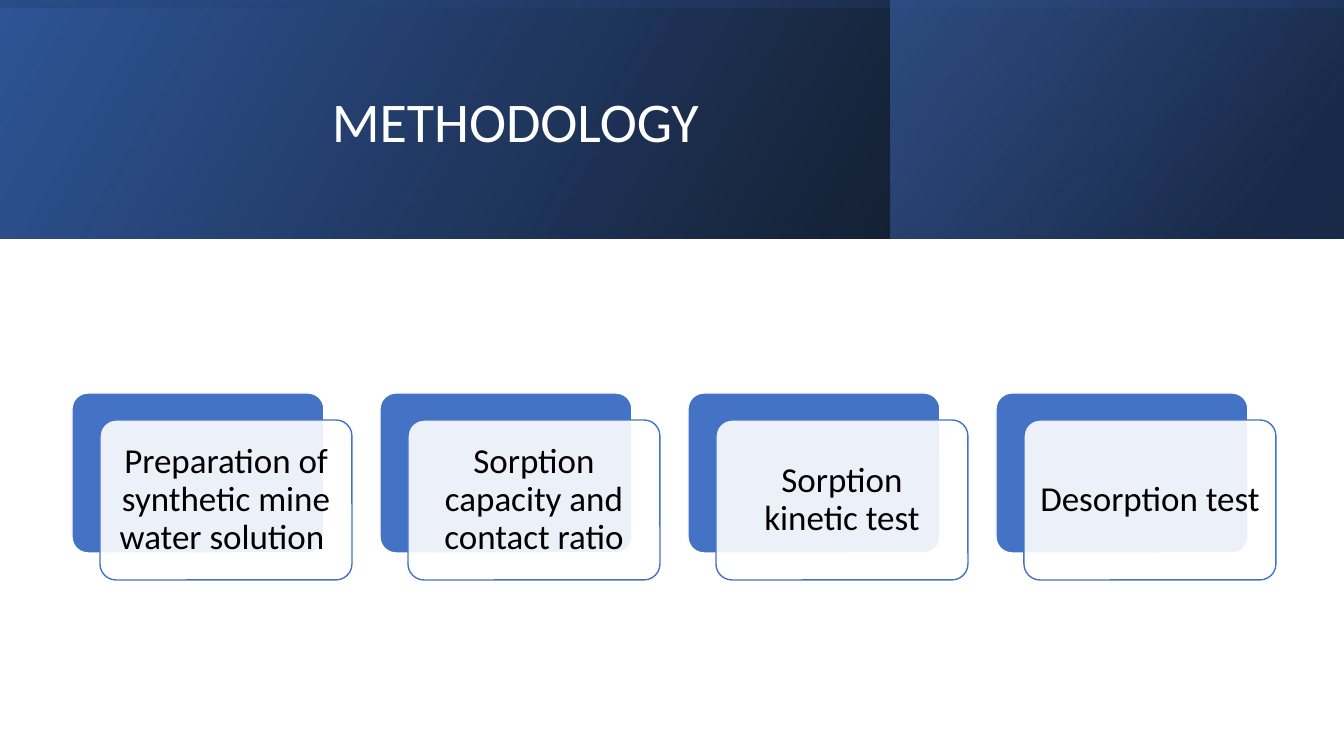
from dataclasses import dataclass

from lxml import etree
from pptx import Presentation
from pptx import util as u
from pptx.dml.color import RGBColor
from pptx.enum import shapes, text
from pptx.oxml.ns import qn
from pptx.shapes.autoshape import Shape
from pptx.slide import Slide
from pptx.text.text import TextFrame

EMU_PER_PX = 914400 / 100.8
FONT = "Calibri"

WHITE = RGBColor(0xFF, 0xFF, 0xFF)
BLACK = RGBColor(0x00, 0x00, 0x00)
BLUE = RGBColor(0x44, 0x72, 0xC4)
DEEP_BLUE = RGBColor(0x2F, 0x55, 0x97)
NAVY = RGBColor(0x20, 0x38, 0x64)


@dataclass(frozen=True)
class Box:
    left: int
    top: int
    width: int
    height: int


@dataclass(frozen=True)
class Stop:
    position: float
    color: RGBColor
    opacity: int


@dataclass(frozen=True)
class Band:
    box: Box
    start: Stop
    end: Stop
    angle: int  # counter-clockwise degrees
    rotation: int = 0


BANDS = [
    Band(Box(0, 0, 1344, 239), Stop(0, BLACK, 96), Stop(1, DEEP_BLUE, 100), 30),
    Band(Box(891, 0, 452, 239), Stop(0.19, NAVY, 68), Stop(1, BLUE, 48), 40),
    Band(Box(552, -552, 239, 1344), Stop(0.23, DEEP_BLUE, 16), Stop(0.99, BLACK, 45), 10, 270),
]

TITLE_BOX = Box(152, 38, 739, 173)
STEPS = [
    "Preparation of synthetic mine water solution ",
    "Sorption capacity and contact ratio",
    "Sorption kinetic test",
    "Desorption test",
]
FIRST_CARD = Box(72, 393, 252, 160)
CARD_PITCH = 308
FRONT_SHIFT_X, FRONT_SHIFT_Y = 28, 27
CARD_INSET = 10


def px(length: int) -> u.Emu:
    return u.Emu(round(length * EMU_PER_PX))


def add_box(page: Slide, kind: shapes.MSO_SHAPE, box: Box) -> Shape:
    shape = page.shapes.add_shape(kind, px(box.left), px(box.top), px(box.width), px(box.height))
    shape.shadow.inherit = False
    return shape


def set_opacity(color_element: etree._Element, percent: int) -> None:
    etree.SubElement(color_element, qn("a:alpha")).set("val", str(percent * 1000))


def add_band(page: Slide, band: Band) -> None:
    shape = add_box(page, shapes.MSO_SHAPE.RECTANGLE, band.box)
    shape.rotation = band.rotation
    shape.element.spPr.find(qn("a:xfrm")).set("flipH", "1")
    shape.line.fill.background()
    shape.fill.gradient()
    shape.fill.gradient_angle = band.angle
    stops = (band.start, band.end)
    for gradient_stop, stop in zip(shape.fill.gradient_stops, stops):
        gradient_stop.position = stop.position
        gradient_stop.color.rgb = stop.color
    for color_element, stop in zip(shape.element.spPr.iter(qn("a:srgbClr")), stops):
        set_opacity(color_element, stop.opacity)


def write_centered(frame: TextFrame, words: str, size: int, color: RGBColor) -> None:
    frame.text = words
    frame.word_wrap = True
    frame.vertical_anchor = text.MSO_ANCHOR.MIDDLE
    para = frame.paragraphs[0]
    para.alignment = text.PP_ALIGN.CENTER
    para.line_spacing = 0.9
    font = para.runs[0].font
    font.name, font.size, font.color.rgb = FONT, u.Pt(size), color


def add_panel(page: Slide, box: Box, fill: RGBColor, line: RGBColor) -> Shape:
    panel = add_box(page, shapes.MSO_SHAPE.ROUNDED_RECTANGLE, box)
    panel.adjustments[0] = 0.1
    panel.fill.solid()
    panel.fill.fore_color.rgb = fill
    panel.line.color.rgb = line
    panel.line.width = u.Pt(1)
    return panel


def add_card(page: Slide, box: Box, words: str) -> None:
    add_panel(page, box, BLUE, WHITE)
    front_box = Box(box.left + FRONT_SHIFT_X, box.top + FRONT_SHIFT_Y, box.width, box.height)
    front = add_panel(page, front_box, WHITE, BLUE)
    set_opacity(front.element.spPr.find(qn("a:solidFill"))[0], 90)
    frame = front.text_frame
    frame.margin_left = frame.margin_right = px(CARD_INSET)
    frame.margin_top = frame.margin_bottom = px(CARD_INSET)
    write_centered(frame, words, 25, BLACK)


def main() -> None:
    deck = Presentation()
    deck.slide_width, deck.slide_height = px(1344), px(756)
    page = deck.slides.add_slide(deck.slide_layouts.get_by_name("Title Only"))

    # Header bands
    for band in BANDS:
        add_band(page, band)

    # Title, raised above the bands
    title = page.shapes.title
    title.element.getparent().append(title.element)
    title.left, title.top = px(TITLE_BOX.left), px(TITLE_BOX.top)
    title.width, title.height = px(TITLE_BOX.width), px(TITLE_BOX.height)
    write_centered(title.text_frame, "METHODOLOGY ", 40, WHITE)

    # Method steps
    first = FIRST_CARD
    for index, step in enumerate(STEPS):
        left = first.left + index * CARD_PITCH
        add_card(page, Box(left, first.top, first.width, first.height), step)

    deck.save("out.pptx")


if __name__ == "__main__":
    main()
